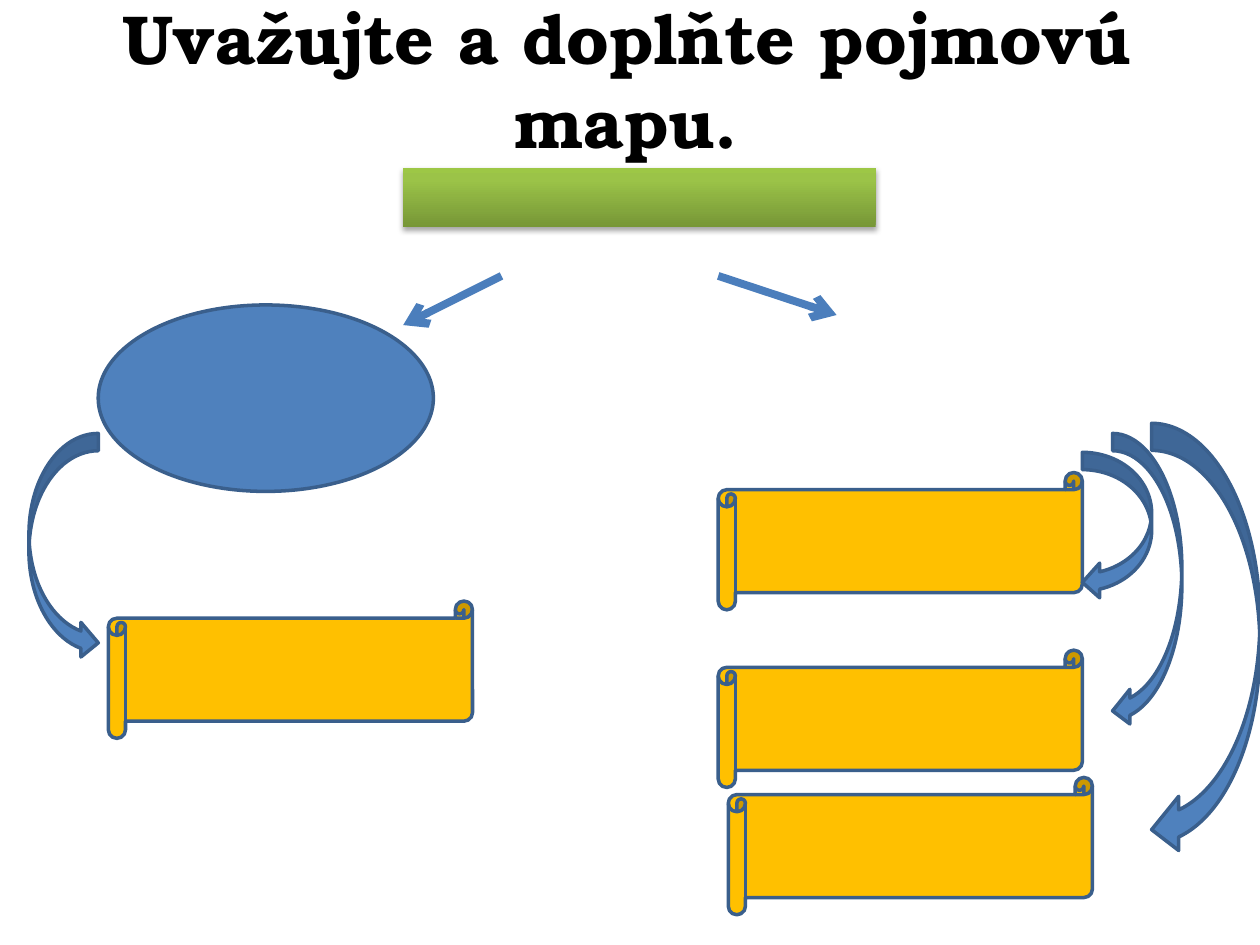
from copy import deepcopy

from pptx import Presentation
from pptx import util as u
from pptx.dml.color import RGBColor
from pptx.enum import shapes, text
from pptx.oxml.ns import qn
from lxml import etree

BLACK = RGBColor(0x00, 0x00, 0x00)
BLUE = RGBColor(0x4F, 0x81, 0xBD)
OUTLINE = RGBColor(0x3A, 0x5F, 0x8C)
ARROW = RGBColor(0x4B, 0x7E, 0xBC)
GOLD = RGBColor(0xFF, 0xC0, 0x00)
GREEN_STOPS = [
    (0, RGBColor(0x77, 0x97, 0x37)),
    (0.8, RGBColor(0x9B, 0xC3, 0x48)),
    (1, RGBColor(0x9D, 0xC7, 0x46)),
]
SHAPE = shapes.MSO_SHAPE


class ConceptMap:
    """Draws the parts of a concept map on one slide."""

    font = "TeX Gyre Bonum"

    def __init__(self, slide):
        self.slide = slide

    def title(self, wording, *box):
        frame = self.slide.shapes.add_textbox(*map(u.Inches, box)).text_frame
        frame.word_wrap = True
        frame.vertical_anchor = text.MSO_ANCHOR.MIDDLE
        paragraph = frame.paragraphs[0]
        paragraph.text = wording
        paragraph.alignment = text.PP_ALIGN.CENTER
        paragraph.font.name = self.font
        paragraph.font.size = u.Pt(39.6)
        paragraph.font.bold = True
        paragraph.font.color.rgb = BLACK

    def shape(self, kind, color, *box):
        shape = self.slide.shapes.add_shape(kind, *map(u.Inches, box))
        shape.shadow.inherit = False
        shape.fill.solid()
        shape.fill.fore_color.rgb = color
        shape.line.color.rgb = OUTLINE
        shape.line.width = u.Pt(2)
        return shape

    def banner(self, *box):
        shape = self.shape(SHAPE.RECTANGLE, BLUE, *box)
        shape.line.fill.background()
        shape.fill.gradient()
        shape.fill.gradient_angle = 90
        stop_list = shape._element.spPr.find(".//" + qn("a:gsLst"))
        stop_list.insert(1, deepcopy(stop_list[0]))
        for stop, (position, color) in zip(shape.fill.gradient_stops, GREEN_STOPS):
            stop.position = position
            stop.color.rgb = color
        effects = shape._element.spPr.find(qn("a:effectLst"))
        shadow = etree.SubElement(
            effects, qn("a:outerShdw"), blurRad=str(u.Pt(3.1)),
            dist=str(u.Pt(1.8)), dir="5400000", rotWithShape="0")
        tint = etree.SubElement(shadow, qn("a:srgbClr"), val=str(BLACK))
        etree.SubElement(tint, qn("a:alpha"), val="35000")

    def scroll(self, left, top):
        self.shape(SHAPE.HORIZONTAL_SCROLL, GOLD, left, top, 2.89, 1.09)

    def arrow(self, *ends):
        connector = self.slide.shapes.add_connector(
            shapes.MSO_CONNECTOR.STRAIGHT, *map(u.Inches, ends))
        connector.line.color.rgb = ARROW
        connector.line.width = u.Pt(4.5)
        etree.SubElement(connector.line._get_or_add_ln(), qn("a:tailEnd"), type="arrow")
        etree.SubElement(connector._element.spPr, qn("a:effectLst"))


def main():
    presentation = Presentation()
    presentation.slide_width = u.Inches(10)
    presentation.slide_height = u.Inches(7.5)
    concept_map = ConceptMap(presentation.slides.add_slide(presentation.slide_layouts[6]))

    concept_map.title("Uvažujte a doplňte pojmovú mapu.", 0.47, 0, 9, 1.25)
    concept_map.banner(3.2, 1.33, 3.75, 0.47)
    concept_map.shape(SHAPE.OVAL, BLUE, 0.78, 2.42, 2.66, 1.48)
    for left, top in [(0.86, 4.77), (5.78, 6.17), (5.7, 5.16), (5.7, 3.75)]:
        concept_map.scroll(left, top)
    concept_map.arrow(3.98, 2.19, 3.2, 2.58)
    concept_map.arrow(5.7, 2.19, 6.64, 2.5)
    concept_map.shape(SHAPE.CURVED_RIGHT_ARROW, BLUE, 0.23, 3.44, 0.55, 1.8)
    for box in [(8.59, 3.59, 0.55, 1.17), (8.83, 3.44, 0.55, 2.34), (9.14, 3.36, 0.86, 3.44)]:
        concept_map.shape(SHAPE.CURVED_LEFT_ARROW, BLUE, *box)

    presentation.save("out.pptx")


if __name__ == "__main__":
    main()
